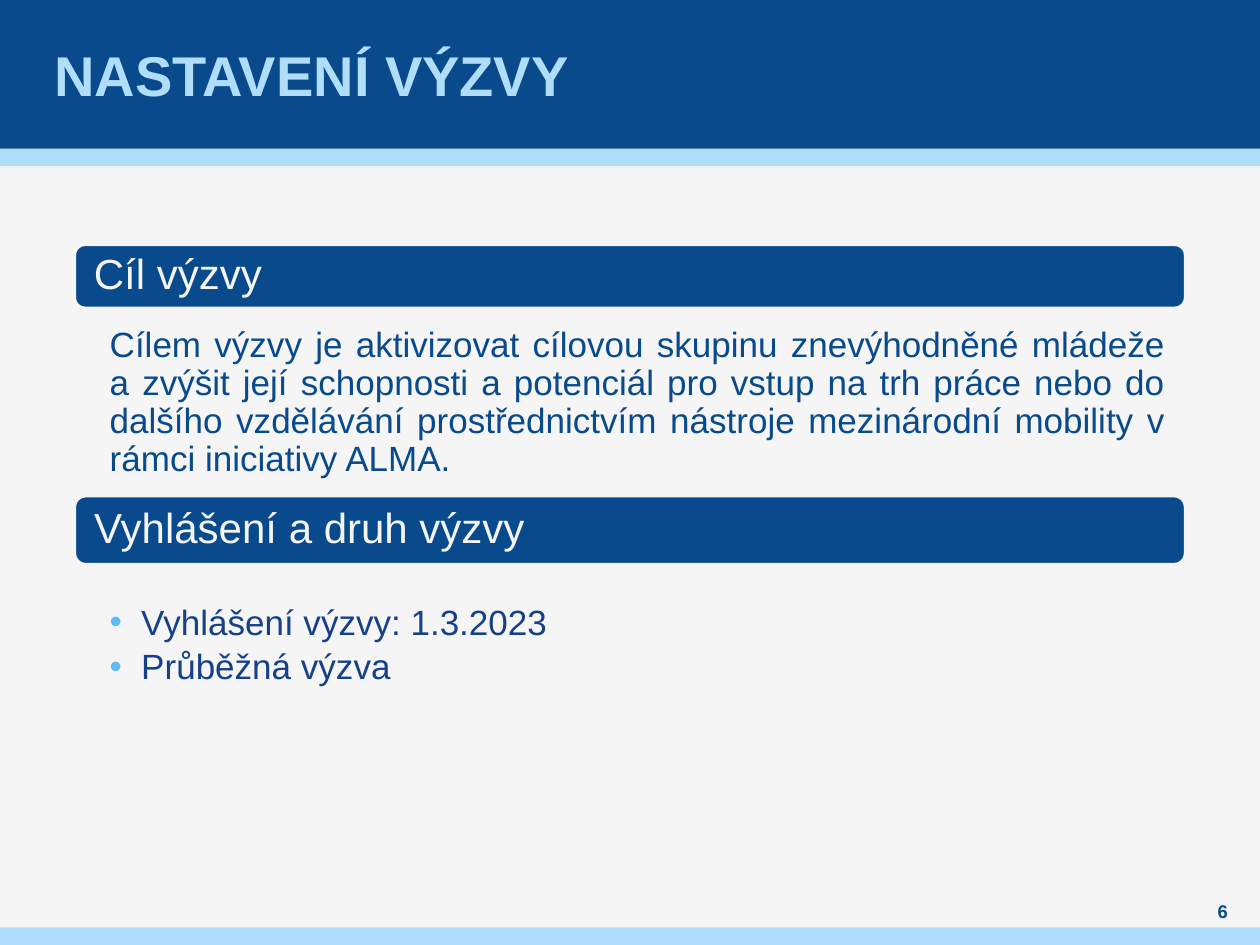
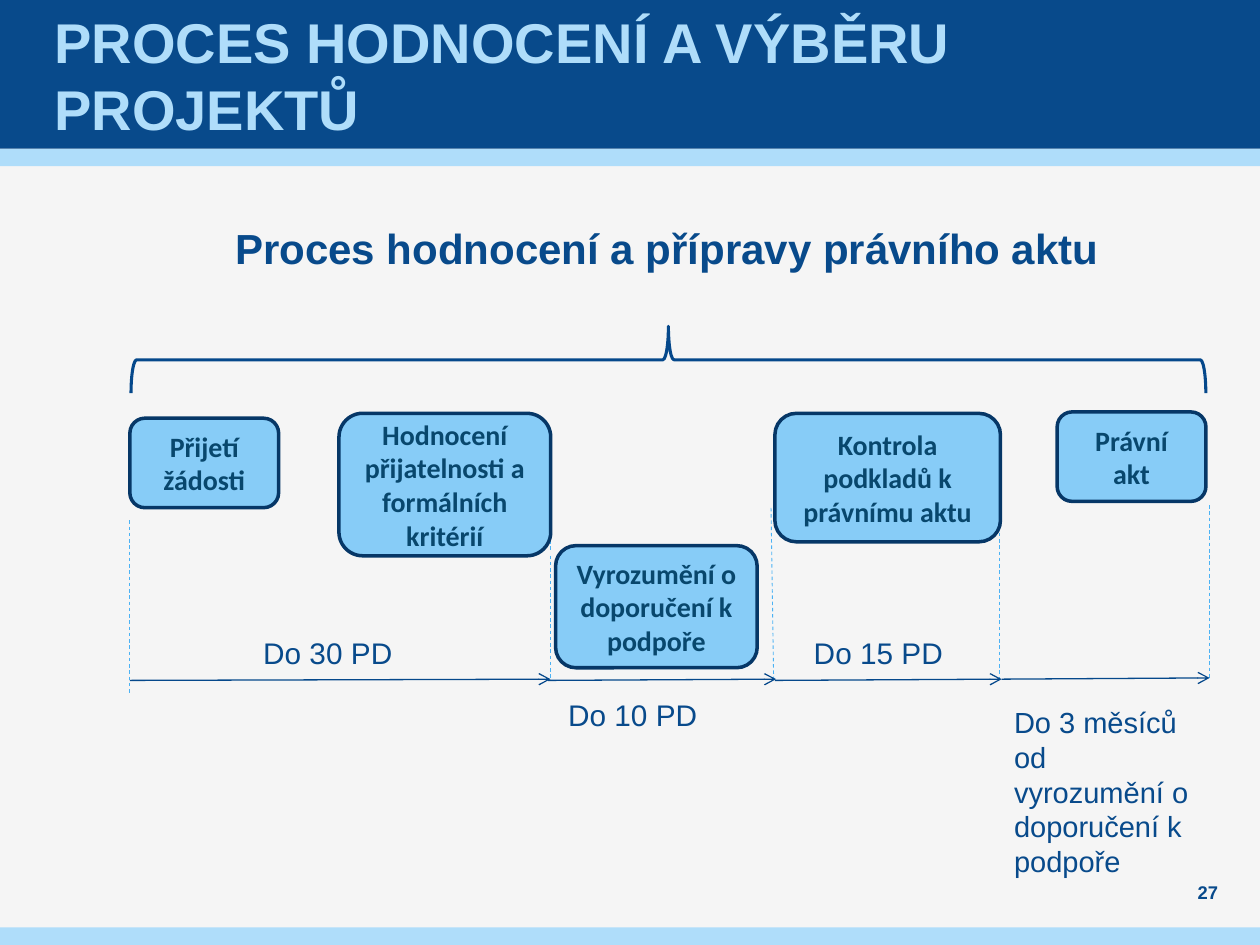
"""Build two slides: the call settings and the project evaluation process."""
import pptx
import pptx.dml.color
import pptx.enum.dml
import pptx.enum.shapes
import pptx.enum.text
import pptx.oxml
import pptx.oxml.ns
import pptx.util

Pt = pptx.util.Pt
RGBColor = pptx.dml.color.RGBColor
SHAPE = pptx.enum.shapes.MSO_SHAPE
ALIGN = pptx.enum.text.PP_ALIGN
TOP = pptx.enum.text.MSO_ANCHOR.TOP
MIDDLE = pptx.enum.text.MSO_ANCHOR.MIDDLE
qn = pptx.oxml.ns.qn

PAPER = RGBColor(0xF5, 0xF5, 0xF5)
NAVY = RGBColor(0x08, 0x4A, 0x8B)
PALE = RGBColor(0xAF, 0xDD, 0xFA)
BULLET_TEXT = RGBColor(0x16, 0x40, 0x88)
STEP_FILL = RGBColor(0x87, 0xCC, 0xF7)
STEP_LINE = RGBColor(0x06, 0x37, 0x67)
STEP_TEXT = RGBColor(0x08, 0x47, 0x6D)
ARROW = RGBColor(0x05, 0x48, 0x8B)
DASH = RGBColor(0x4B, 0xB2, 0xF4)

TITLE = dict(size=32, color=PALE, bold=True, ins=(2.9, 0, 2.9, 0), anchor=MIDDLE)
NUMBER = dict(size=10.5, bold=True, ins=(0, 0, 0, 0), anchor=MIDDLE,
              para=dict(alignment=ALIGN.CENTER))
HEADING = dict(size=24, color=PAPER, ins=(9.4, 7.2, 7.2, 7.2), anchor=MIDDLE,
               para=dict(line_spacing=0.9))
BODY_INS = (20.2, 2.2, 11.5, 2.2)
BODY = dict(size=20, ins=BODY_INS, para=dict(
    alignment=ALIGN.JUSTIFY, line_spacing=0.9, space_after=Pt(4)))
BULLETS = dict(size=20, color=BULLET_TEXT, ins=BODY_INS, para=dict(
    line_spacing=0.9, space_after=Pt(4)))
STEP = dict(size=16, color=STEP_TEXT, bold=True, font="Calibri", anchor=MIDDLE,
            para=dict(alignment=ALIGN.CENTER))
SUBTITLE = dict(size=24, bold=True)
TERM = dict(size=17)


def add_box(s, at, lines=(), fmt=None, kind=None, fill=None, line=None, weight=2):
    fmt = fmt or {}
    at = [Pt(v) for v in at]
    if kind is None:
        sp = s.shapes.add_textbox(*at)
    else:
        sp = s.shapes.add_shape(kind, *at)
        sp.shadow.inherit = False
        for part, color in ((sp.fill, fill), (sp.line.fill, line)):
            if color is None:
                part.background()
            else:
                part.solid()
                part.fore_color.rgb = color
        if line is not None:
            sp.line.width = Pt(weight)
    tf = sp.text_frame
    tf.word_wrap = True
    tf.vertical_anchor = fmt.get("anchor", TOP)
    for side, inset in zip(("left", "top", "right", "bottom"),
                           fmt.get("ins", (7.2, 3.6, 7.2, 3.6))):
        setattr(tf, f"margin_{side}", Pt(inset))
    for i, text in enumerate(lines):
        p = tf.add_paragraph() if i else tf.paragraphs[0]
        for name, value in {"alignment": ALIGN.LEFT, **fmt.get("para", {})}.items():
            setattr(p, name, value)
        r = p.add_run()
        r.text = text
        for name, value in dict(name=fmt.get("font", "Arial"), size=Pt(fmt["size"]),
                                bold=fmt.get("bold", False)).items():
            setattr(r.font, name, value)
        r.font.color.rgb = fmt.get("color", NAVY)
    return sp


def add_line(s, start, end, color, weight):
    cx = s.shapes.add_connector(pptx.enum.shapes.MSO_CONNECTOR.STRAIGHT,
                                *[Pt(v) for v in (*start, *end)])
    cx.line.color.rgb = color
    cx.line.width = Pt(weight)
    pptx.oxml.xmlchemy.OxmlElement
    cx._element.spPr.append(pptx.oxml.parse_xml(
        f'<a:effectLst {pptx.oxml.ns.nsdecls("a")}/>'))
    return cx


prs = pptx.Presentation()
prs.slide_width, prs.slide_height = Pt(720), Pt(540)
bg = prs.slide_master.background.fill
bg.solid()
bg.fore_color.rgb = PAPER

slides = []
for title, number, number_at in (
        ("NASTAVENÍ VÝZVY", "6", (680.4, 513.4)),
        ("PROCES HODNOCENÍ A VÝBĚRU PROJEKTŮ", "27", (671.8, 502.6))):
    s = prs.slides.add_slide(prs.slide_layouts[6])
    for top, height, color in ((85, 10, PALE), (0, 85, NAVY), (530, 10, PALE)):
        add_box(s, (0, top, 720, height), kind=SHAPE.RECTANGLE, fill=color)
    add_box(s, (28.1, 0, 663.1, 85), [title], TITLE)
    add_box(s, (*number_at, 36.7, 14.4), [number], NUMBER)
    slides.append(s)
settings, process = slides

LEFT, WIDTH = 42.5, 635
for heading, top, height in (("Cíl výzvy", 139.7, 36.5),
                             ("Vyhlášení a druh výzvy", 283.2, 39.5)):
    add_box(settings, (LEFT, top, WIDTH, height), [heading], HEADING,
            SHAPE.ROUNDED_RECTANGLE, NAVY, PAPER)
add_box(settings, (LEFT, 185, WIDTH, 92), [
    "Cílem výzvy je aktivizovat cílovou skupinu znevýhodněné mládeže a zvýšit "
    "její schopnosti a potenciál pro vstup na trh práce nebo do dalšího "
    "vzdělávání prostřednictvím nástroje mezinárodní mobility v rámci "
    "iniciativy ALMA."], BODY)
bullets = add_box(settings, (LEFT, 343.4, WIDTH, 83.5),
                  ["Vyhlášení výzvy: 1.3.2023", "Průběžná výzva"], BULLETS)
for p in bullets.text_frame.paragraphs:
    pPr = p._p.get_or_add_pPr()
    pPr.set("marL", str(Pt(18)))
    pPr.set("indent", str(Pt(-18)))
    for xml in ('<a:buClr {}><a:srgbClr val="5FBBF5"/></a:buClr>',
                '<a:buFont {} typeface="Arial"/>', '<a:buChar {} char="•"/>'):
        pPr.append(pptx.oxml.parse_xml(xml.format(pptx.oxml.ns.nsdecls("a"))))

add_box(process, (127.4, 123.8, 508.3, 49.7),
        ["Proces hodnocení a přípravy právního aktu"], SUBTITLE)
brace = add_box(process, (362.9, -101.5, 38.2, 614.2), kind=SHAPE.RIGHT_BRACE,
                line=ARROW, weight=1.75)
brace.rotation = 270

for start, end in (((74.2, 297.4), (74.2, 396)), ((314.6, 276.5), (314.6, 315.4)),
                   ((314.6, 317.5), (314.6, 388.1)), ((440.6, 290.2), (442.1, 388.8)),
                   ((571, 290.2), (571, 388.8)), ((691.2, 288.7), (691.2, 388.1))):
    add_line(process, start, end, DASH, 0.5).line.dash_style = pptx.enum.dml.MSO_LINE.DASH

for x1, y1, x2, y2 in ((74.2, 388.8, 314.6, 388.1), (313.2, 388.8, 443.5, 388.1),
                       (442.8, 388.8, 572.4, 388.1), (572.4, 388.1, 691.2, 387.4)):
    cx = add_line(process, (x1, y1), (x2, y2), ARROW, 0.75)
    cx.line._get_or_add_ln().append(pptx.oxml.parse_xml(
        f'<a:tailEnd {pptx.oxml.ns.nsdecls("a")} type="arrow"/>'))

for text, at in (
        ("Přijetí žádosti", (74.2, 239, 85, 51.1)),
        ("Hodnocení přijatelnosti a formálních kritérií", (193.7, 236.2, 121, 81.4)),
        ("Vyrozumění o doporučení k podpoře", (317.5, 311.8, 115.2, 69.8)),
        ("Kontrola podkladů k právnímu aktu", (442.8, 236.2, 128.9, 73.4)),
        ("Právní akt", (604.1, 235.4, 85, 51.1))):
    add_box(process, at, [text], STEP, SHAPE.ROUNDED_RECTANGLE, STEP_FILL, STEP_LINE)

for text, at, size in (
        ("Do 30 PD", (143.3, 359.3, 164.2, 32.4), 17),
        ("Do 10 PD", (317.5, 394.6, 164.2, 46.8), 17),
        ("Do 15 PD", (457.9, 359.3, 102.2, 28.1), 17),
        ("Do 3 měsíců od vyrozumění o doporučení k podpoře",
         (572.4, 398.9, 119.5, 92.2), 16.6)):
    add_box(process, at, [text], {**TERM, "size": size})

prs.save("out.pptx")
